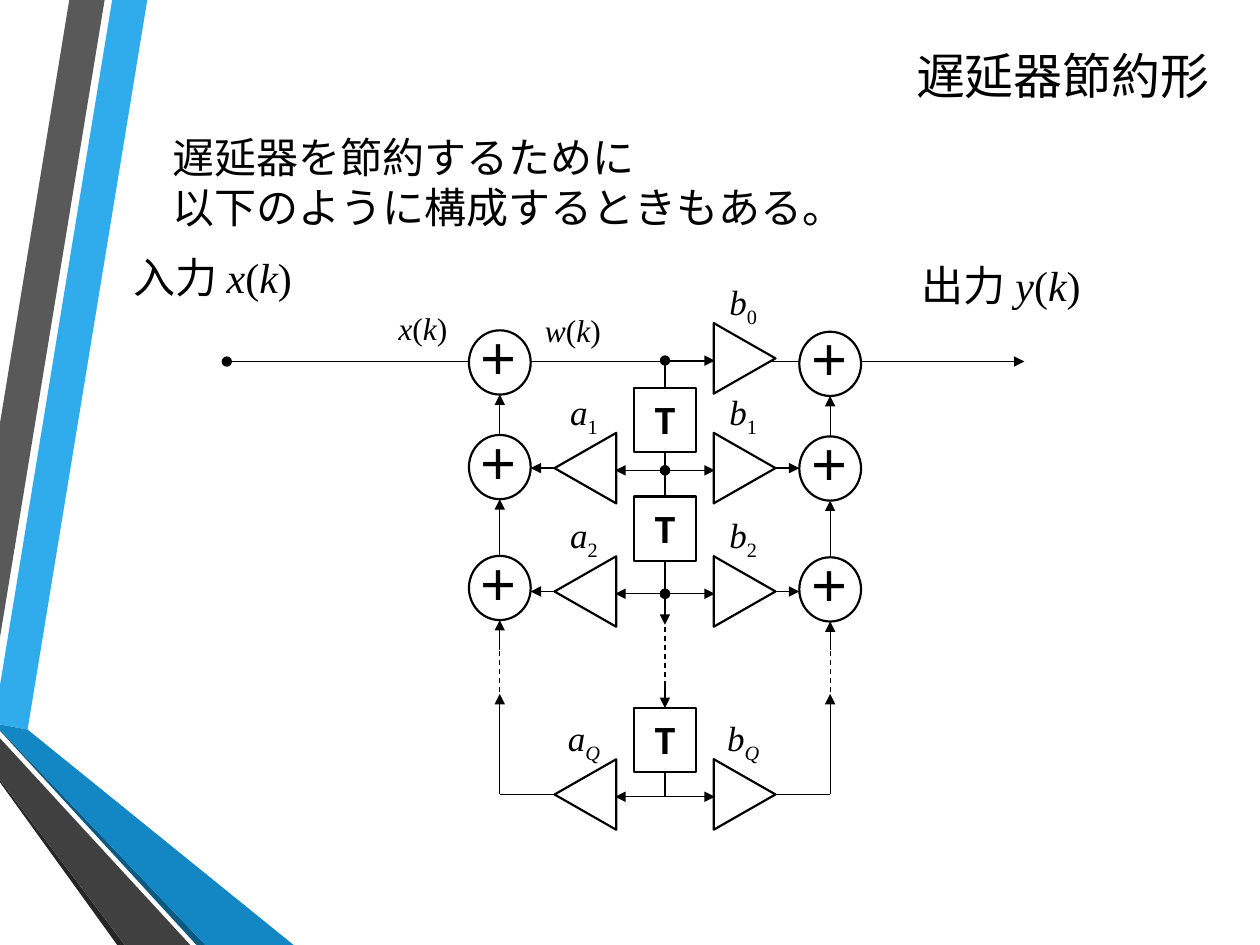
from dataclasses import dataclass

from lxml.etree import SubElement
from pptx import Presentation
from pptx.dml.color import RGBColor
from pptx.enum.dml import MSO_LINE
from pptx.enum.shapes import MSO_CONNECTOR, MSO_SHAPE
from pptx.enum.text import MSO_ANCHOR, MSO_AUTO_SIZE, PP_ALIGN
from pptx.oxml.ns import qn
from pptx.util import Pt


@dataclass(frozen=True)
class Theme:
    ink: str = "000000"
    paper: str = "FFFFFF"
    heading: str = "Calibri"
    serif: str = "Times New Roman"
    japanese: str = "Noto Sans CJK JP"
    title_size: float = 28
    body_size: float = 24
    symbol_size: float = 20
    signal_size: float = 18
    wire: float = 0.75
    outline: float = 1.25


@dataclass(frozen=True)
class Box:
    left: float
    top: float
    width: float
    height: float

    def inner(self, left, top, width, height):
        return Box(self.left + left, self.top + top, width, height)

    def centered(self, x, y, width, height):
        return self.inner(x - width / 2, y - height / 2, width, height)

    def in_points(self):
        return [Pt(v) for v in (self.left, self.top, self.width, self.height)]


THEME = Theme()
RIBBONS = [
    ("30ACEC", [(0, 391.7), (0, 414), (15.8, 416.9), (84.2, 0), (64.1, 0)]),
    ("595959", [(59.8, 0), (39.6, 0), (0, 241.9), (0, 364.3)]),
    ("262626", [(0, 445.7), (0, 447.1), (67, 540), (71.3, 540)]),
    ("0C5A82", [(0, 416.9), (0, 417.6), (112.3, 540), (117.4, 540)]),
    ("1287C3", [(0, 416.9), (117.4, 540), (167.8, 540), (15.8, 416.9), (0, 414)]),
    ("404040", [(0, 445.7), (71.3, 540), (108.7, 540), (0, 421.9)]),
]


def color(value):
    return RGBColor.from_string(value)


def add_run(paragraph, text, size, font, italic=False, bold=False, subscript=False):
    run = paragraph.add_run()
    run.text = text
    run.font.size, run.font.name = Pt(size), font
    run.font.italic, run.font.bold = italic, bold
    run.font.color.rgb = color(THEME.ink)
    properties = run._r.get_or_add_rPr()
    SubElement(properties, qn("a:ea")).set("typeface", THEME.japanese)
    if subscript:
        properties.set("baseline", "-25000")


def add_signal(paragraph, name, size):
    for text, italic in ((name, True), ("(", False), ("k", True), (")", False)):
        add_run(paragraph, text, size, THEME.serif, italic)


def set_frame(frame, anchor=MSO_ANCHOR.TOP, insets=None):
    frame.word_wrap = True
    frame.auto_size = MSO_AUTO_SIZE.NONE
    frame.vertical_anchor = anchor
    if insets:
        (frame.margin_left, frame.margin_top,
         frame.margin_right, frame.margin_bottom) = [Pt(v) for v in insets]
    return frame.paragraphs[0]


def place(shape, box):
    shape.left, shape.top, shape.width, shape.height = box.in_points()


def add_text_area(shapes, box, **frame_options):
    return set_frame(shapes.add_textbox(*box.in_points()).text_frame, **frame_options)


# Heading and introduction
def fill_title(title, box):
    place(title, box)
    paragraph = set_frame(title.text_frame, MSO_ANCHOR.MIDDLE)
    paragraph.alignment = PP_ALIGN.RIGHT
    add_run(paragraph, "遅延器節約形", THEME.title_size, THEME.heading)


def fill_introduction(body, box):
    place(body, box)
    paragraph = set_frame(body.text_frame)
    for index, text in enumerate(("遅延器を節約するために", "以下のように構成するときもある。")):
        if index:
            paragraph = body.text_frame.add_paragraph()
        paragraph.space_before = Pt(0)
        paragraph.line_spacing = Pt(28.8)
        properties = paragraph._p.get_or_add_pPr()
        properties.set("marL", "0")
        properties.set("indent", "0")
        SubElement(properties, qn("a:buNone"))
        add_run(paragraph, text, THEME.body_size, THEME.serif)


def add_port_label(shapes, box, caption, signal):
    paragraph = add_text_area(shapes, box)
    paragraph.line_spacing = Pt(28.8)
    add_run(paragraph, caption, THEME.body_size, THEME.serif)
    add_signal(paragraph, signal, THEME.body_size)


# Ribbons along the left edge
def add_ribbons(shapes, box):
    for fill, points in RIBBONS:
        corners = [(Pt(box.left + x), Pt(box.top + y)) for x, y in points]
        builder = shapes.build_freeform(*corners[0])
        builder.add_line_segments(corners[1:], close=True)
        ribbon = builder.convert_to_shape()
        ribbon.shadow.inherit = False
        ribbon.fill.solid()
        ribbon.fill.fore_color.rgb = color(fill)
        ribbon.line.fill.background()


# Signal flow parts
def add_block(shapes, kind, box, symbol=None, size=None, font=None, align=None):
    block = shapes.add_shape(kind, *box.in_points())
    block.shadow.inherit = False
    block.fill.solid()
    block.fill.fore_color.rgb = color(THEME.paper)
    block.line.color.rgb = color(THEME.ink)
    block.line.width = Pt(THEME.outline)
    if symbol:
        paragraph = set_frame(block.text_frame, MSO_ANCHOR.MIDDLE, (0, 8.6, 0, 0))
        paragraph.alignment = align
        paragraph.line_spacing = Pt(16)
        add_run(paragraph, symbol, size, font, bold=True)
    return block


def add_wire(shapes, box, start, end, head=None, tail=None, dashed=False):
    ends = [Pt(v) for x, y in (start, end) for v in (box.left + x, box.top + y)]
    wire = shapes.add_connector(MSO_CONNECTOR.STRAIGHT, *ends)
    wire.line.color.rgb = color(THEME.ink)
    wire.line.width = Pt(THEME.wire)
    if dashed:
        wire.line.dash_style = MSO_LINE.DASH
    outline = wire.line._get_or_add_ln()
    for tag, mark in (("a:headEnd", head), ("a:tailEnd", tail)):
        if mark:
            SubElement(outline, qn(tag)).set("type", mark)
    SubElement(wire._element.spPr, qn("a:effectLst"))
    return wire


def add_gain(shapes, box, x, y, side, name, index):
    gain = add_block(shapes, MSO_SHAPE.ISOSCELES_TRIANGLE, box.centered(x, y, 40.3, 35.3))
    gain.rotation = 90 * side % 360
    label = box.centered(x - 0.8, y - 25.2, 31, 30.2)
    paragraph = add_text_area(shapes, label, anchor=MSO_ANCHOR.MIDDLE, insets=(0, 0, 0, 0))
    paragraph.alignment = PP_ALIGN.CENTER
    paragraph.line_spacing = Pt(16)
    add_run(paragraph, name, THEME.symbol_size, THEME.serif, True)
    add_run(paragraph, index, THEME.symbol_size, THEME.serif, index == "Q", subscript=True)


# One side of the filter: -1 is feedback (a), 1 is feedforward (b)
def add_branch(shapes, box, tap, side, name, gain_rows):
    adder_x, gain_x = tap + 94.4 * side, tap + 45.5 * side
    base, apex = gain_x - 17 * side, gain_x + 17.6 * side
    adder_rows = [y + 0.4 * side for y in (47.5, 107.3, 176.4)]
    radius = 18.35
    for y in adder_rows:
        add_block(shapes, MSO_SHAPE.OVAL, box.centered(adder_x, y, 35.3, 2 * radius),
                  "＋", THEME.body_size, THEME.heading, PP_ALIGN.JUSTIFY)
    for upper, lower in zip(adder_rows, adder_rows[1:]):
        add_wire(shapes, box, (adder_x, lower - radius), (adder_x, upper + radius), tail="triangle")
    for index, y in gain_rows.items():
        add_gain(shapes, box, gain_x, y, side, name, index)
        joint = "oval" if index in "12" else None
        add_wire(shapes, box, (tap, y + 1.3), (base, y + 1.3), joint, "triangle")
        if joint:
            add_wire(shapes, box, (apex, y), (adder_x - 17.6 * side, y), tail="triangle")
    # Return path from the last gain, broken where stages are omitted
    last = gain_rows["Q"]
    add_wire(shapes, box, (apex, last), (adder_x, last))
    add_wire(shapes, box, (adder_x, last), (adder_x, 236.5), tail="triangle")
    add_wire(shapes, box, (adder_x, 246), (adder_x, 201), dashed=True)
    add_wire(shapes, box, (adder_x, 211.5), (adder_x, adder_rows[-1] + radius), tail="triangle")


def add_delay_line(shapes, box, tap):
    first, second, last = [
        add_block(shapes, MSO_SHAPE.RECTANGLE, box.inner(tap - 17.65, top, 35.3, 36.7),
                  "T", THEME.symbol_size, THEME.japanese, PP_ALIGN.CENTER)
        for top in (61.8, 123.7, 244.6)]
    add_wire(shapes, box, (tap, 46), (tap, 61.8), head="oval").end_connect(first, 0)
    link = add_wire(shapes, box, (tap, 98.5), (tap, 123.7))
    link.begin_connect(first, 2)
    link.end_connect(second, 0)
    add_wire(shapes, box, (tap, 160.4), (tap, 197), tail="triangle").begin_connect(second, 2)
    add_wire(shapes, box, (tap, 188), (tap, 233), dashed=True)
    add_wire(shapes, box, (tap, 229), (tap, 244.6), tail="triangle").end_connect(last, 0)
    add_wire(shapes, box, (tap, 281.3), (tap, 295)).begin_connect(last, 2)


def add_filter(shapes, box):
    tap = 250.4
    gain_rows = {"1": 107.5, "2": 178, "Q": 294}
    add_wire(shapes, box, (0, 46.6), (box.width, 46.6), "oval", "triangle")
    add_delay_line(shapes, box, tap)
    add_branch(shapes, box, tap, -1, "a", gain_rows)
    add_branch(shapes, box, tap, 1, "b", {"0": 44.8, **gain_rows})
    for name, left, top in (("x", 91, 12.8), ("w", 174.6, 14.2)):
        add_signal(add_text_area(shapes, box.inner(left, top, 76, 28.8)), name, THEME.signal_size)


def main():
    presentation = Presentation()
    presentation.slide_width, presentation.slide_height = Pt(720), Pt(540)
    slide = presentation.slides.add_slide(presentation.slide_layouts[1])
    shapes = slide.shapes
    add_ribbons(shapes, Box(0, 0, 168, 540))
    fill_title(shapes.title, Box(91.4, 19.4, 607, 46.8))
    fill_introduction(slide.placeholders[1], Box(91.4, 71.5, 607, 65.5))
    add_port_label(shapes, Box(519.8, 144.5, 126.7, 36), "出力 ", "y")
    add_port_label(shapes, Box(69.1, 140, 126.7, 36), "入力 ", "x")
    add_filter(shapes, Box(129.6, 160, 455.8, 312))
    presentation.save("out.pptx")


if __name__ == "__main__":
    main()
